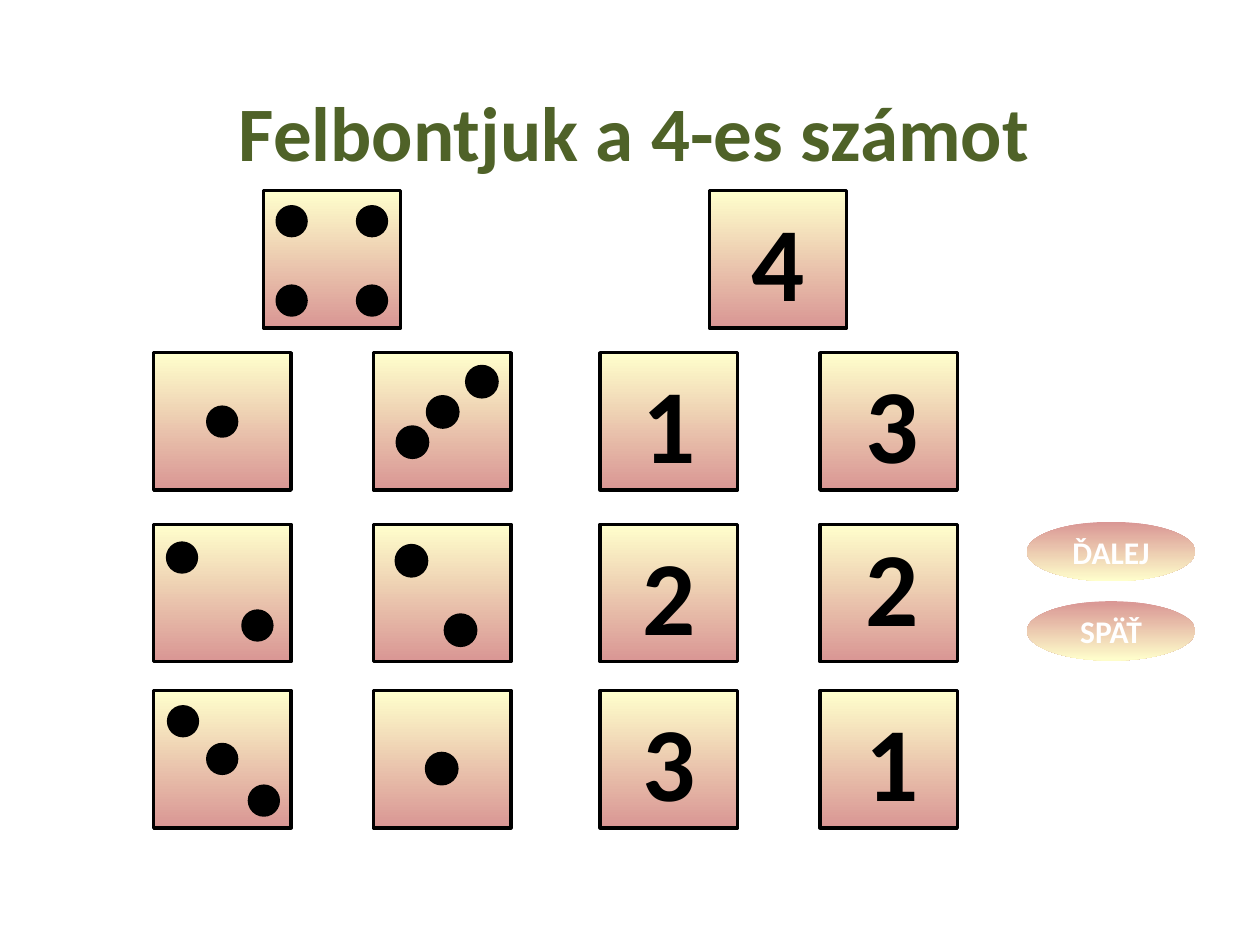
from pptx import Presentation
from pptx.dml.color import RGBColor
from pptx.enum.shapes import MSO_SHAPE
from pptx.enum.text import MSO_ANCHOR, PP_ALIGN
from pptx.util import Cm, Pt

SQUARE, OVAL = MSO_SHAPE.RECTANGLE, MSO_SHAPE.OVAL
MIDDLE, TOP = MSO_ANCHOR.MIDDLE, MSO_ANCHOR.TOP
CENTER = PP_ALIGN.CENTER
TITLE_ONLY = 5

COLORS = {"black": "000000", "white": "FFFFFF", "green": "4F6228",
          "cream": "FFFFCC", "rose": "D99694"}
TITLE = {"size": Pt(44), "color": "green"}
DIGIT = {"size": Pt(60), "color": "black"}
BUTTON = {"size": Pt(18), "color": "white"}

# Lengths in centimetres
TILE = 2.77
HEAD_TOP = 3.84
ROWS = [7.11, 10.57, 13.92]
DOT_COLUMNS = [3.1, 7.53]
DIGIT_COLUMNS = [12.1, 16.53]
HEAD_DOTS = [(0.28, 0.33), (1.9, 0.33), (0.28, 1.93), (1.9, 1.93)]
# Dots of each row, measured from the corner of their tile
LEFT_DOTS = [
    [(1.09, 1.1)],
    [(0.28, 0.38), (1.8, 1.75)],
    [(0.3, 0.33), (1.09, 1.09), (1.93, 1.93)],
]
RIGHT_DOTS = [
    [(0.48, 1.5), (1.09, 0.89), (1.88, 0.28)],
    [(0.46, 0.43), (1.45, 1.83)],
    [(1.07, 1.27)],
]
LEFT_DIGITS = ["1", "2", "3"]
RIGHT_DIGITS = [("3", 7.11), ("2", 10.39), ("1", 13.92)]


def rgb(name):
    return RGBColor.from_string(COLORS[name])


def write(box, text, style, anchor=MIDDLE):
    frame = box.text_frame
    frame.vertical_anchor = anchor
    frame.word_wrap = True
    para = frame.paragraphs[0]
    para.alignment = CENTER
    span = para.add_run()
    span.text = text
    span.font.color.rgb = rgb(style["color"])
    values = {"name": "Calibri", "bold": True, "size": style["size"]}
    for name, value in values.items():
        setattr(span.font, name, value)


def add_shape(shapes, kind, left, top, width, height, outlined=True):
    shape = shapes.add_shape(kind, Cm(left), Cm(top), Cm(width), Cm(height))
    shape.shadow.inherit = False
    if outlined:
        shape.line.color.rgb = rgb("black")
        shape.line.width = Pt(2)
    else:
        shape.line.fill.background()
    return shape


def fill_downward(shape, upper, lower):
    shape.fill.gradient()
    shape.fill.gradient_angle = 270
    for stop, name in zip(shape.fill.gradient_stops, (upper, lower)):
        stop.color.rgb = rgb(name)


def add_tile(shapes, left, top, digit=None):
    tile = add_shape(shapes, SQUARE, left, top, TILE, TILE)
    fill_downward(tile, "cream", "rose")
    if digit:
        write(tile, digit, DIGIT)


def add_dots(shapes, left, top, offsets, size):
    for across, down in offsets:
        dot = add_shape(shapes, OVAL, left + across, top + down, size, size)
        dot.fill.solid()
        dot.fill.fore_color.rgb = rgb("black")


def add_button(shapes, top, label):
    button = add_shape(shapes, OVAL, 20.7, top, 3.4, 1.2, outlined=False)
    fill_downward(button, "rose", "cream")
    write(button, label, BUTTON)


def add_title(page, text):
    title = page.shapes.title
    place = {"left": Cm(1.27), "top": Cm(1.32), "width": Cm(23.04), "height": Cm(2.62)}
    for name, value in place.items():
        setattr(title, name, value)
    write(title, text, TITLE)


def add_digit_box(shapes, text, top):
    box = shapes.add_textbox(Cm(17.2), Cm(top), Cm(1.57), Cm(2.79))
    write(box, text, DIGIT, TOP)


def main():
    deck = Presentation()
    deck.slide_width, deck.slide_height = Cm(25.4), Cm(19.05)
    page = deck.slides.add_slide(deck.slide_layouts[TITLE_ONLY])
    add_title(page, "Felbontjuk a 4-es számot")

    # Navigation buttons
    add_button(page.shapes, 12.12, "SPÄŤ")
    add_button(page.shapes, 10.52, "ĎALEJ")

    # Dice side
    dice = page.shapes.add_group_shape().shapes
    add_tile(dice, 5.31, HEAD_TOP)
    add_dots(dice, 5.31, HEAD_TOP, HEAD_DOTS, 0.58)
    for top, dots in zip(ROWS, LEFT_DOTS):
        for left in DOT_COLUMNS:
            add_tile(dice, left, top)
        add_dots(dice, DOT_COLUMNS[0], top, dots, 0.58)

    # Digit side
    digits = page.shapes.add_group_shape().shapes
    add_tile(digits, 14.3, HEAD_TOP, "4")
    for top, digit in zip(ROWS, LEFT_DIGITS):
        add_tile(digits, DIGIT_COLUMNS[0], top, digit)
        add_tile(digits, DIGIT_COLUMNS[1], top)

    # Second part of each sum, laid over its tile
    for top, dots in zip(ROWS, RIGHT_DOTS):
        add_dots(page.shapes, DOT_COLUMNS[1], top, dots, 0.61)
    for digit, top in RIGHT_DIGITS:
        add_digit_box(page.shapes, digit, top)

    deck.save("out.pptx")


if __name__ == "__main__":
    main()
